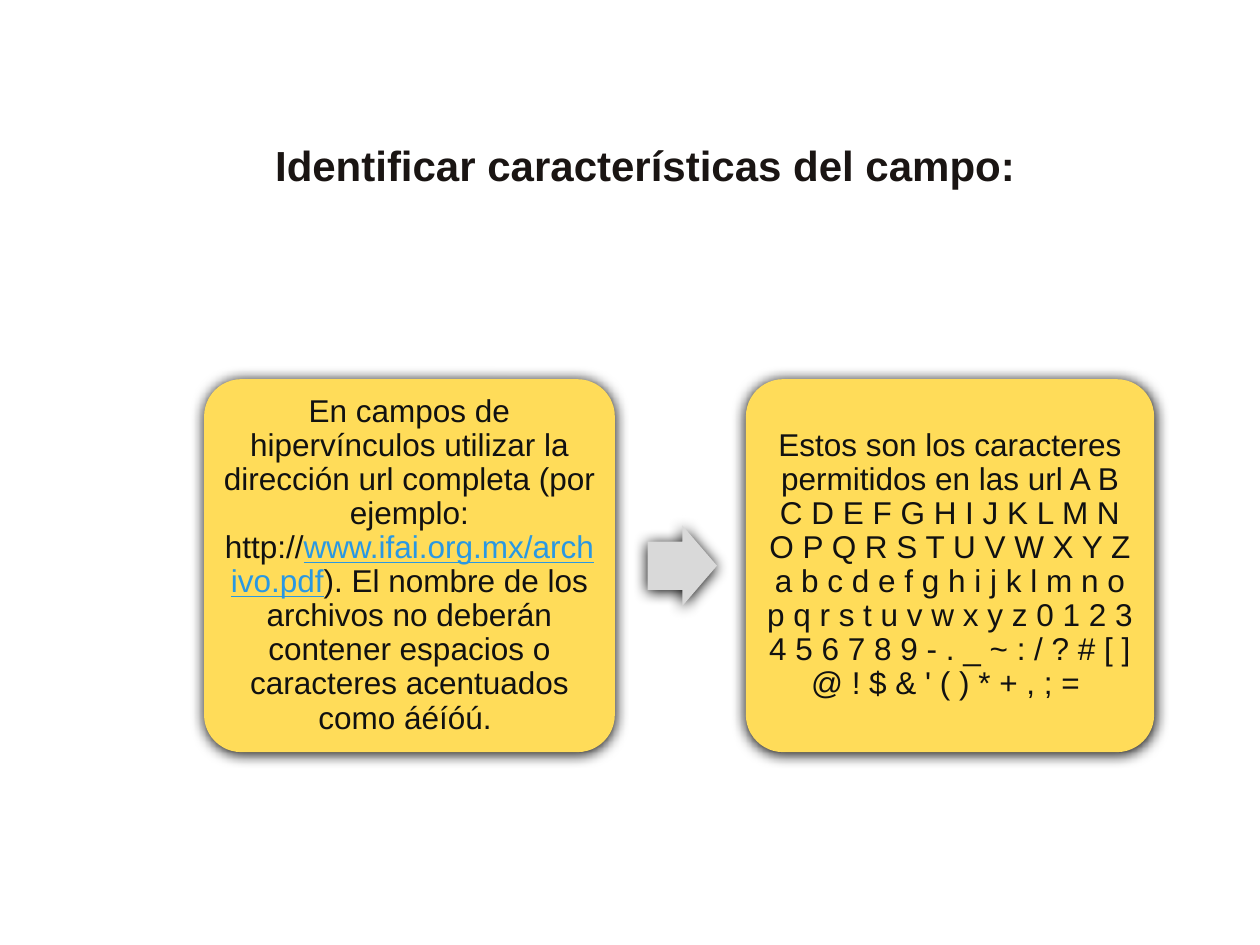
import dataclasses

import lxml.etree
import pptx
import pptx.dml.color
import pptx.enum.shapes
import pptx.enum.text
import pptx.oxml.ns
import pptx.util

Inches = pptx.util.Inches
Pt = pptx.util.Pt
Kind = pptx.enum.shapes.MSO_SHAPE


@dataclasses.dataclass(frozen=True)
class Theme:
    font: str = "Arial"
    head: str = "1A1513"
    ink: str = "111111"
    link: str = "2998E3"
    card: str = "FFDC59"
    arrow: str = "D9D9D9"
    shade: str = "000000"
    big: int = 24
    body: int = 18


THEME = Theme()
URL = "www.ifai.org.mx/archivo.pdf"
CARDS = [
    (1.62, 3.26, [
        ("En campos de hipervínculos utilizar la dirección url completa "
         "(por ejemplo: http://", {}),
        (URL, {"color": THEME.link, "line": True}),
        ("). El nombre de los archivos no deberán contener espacios o "
         "caracteres acentuados como áéíóú. ", {}),
    ]),
    (5.92, 3.24, [
        ("Estos son los caracteres permitidos en las url "
         "A B C D E F G H I J K L M N O P Q R S T U V W X Y Z "
         "a b c d e f g h i j k l m n o p q r s t u v w x y z "
         "0 1 2 3 4 5 6 7 8 9 - . _ ~ : / ? # [ ] @ ! $ & ' ( ) * + , ; = ", {}),
    ]),
]


def write(para, text, color=THEME.ink, size=THEME.body, bold=False, line=False):
    run = para.add_run()
    run.text = text
    font = run.font
    font.name, font.size = THEME.font, Pt(size)
    font.bold, font.underline = bold, line
    font.color.rgb = pptx.dml.color.RGBColor.from_string(color)


class Page:
    """Hold the theme and the current slide, and add its elements."""

    def __init__(self, deck, theme):
        self.theme = theme
        self.slide = deck.slides.add_slide(deck.slide_layouts[5])

    def frame(self, shape, pad_x, pad_y):
        frame = shape.text_frame
        frame.word_wrap = True
        frame.margin_left = frame.margin_right = Inches(pad_x)
        frame.margin_top = frame.margin_bottom = Inches(pad_y)
        frame.vertical_anchor = pptx.enum.text.MSO_ANCHOR.MIDDLE
        para = frame.paragraphs[0]
        para.alignment = pptx.enum.text.PP_ALIGN.CENTER
        return para

    def title(self, text, left, top, width, height):
        shape = self.slide.shapes.title
        shape.left, shape.top = Inches(left), Inches(top)
        shape.width, shape.height = Inches(width), Inches(height)
        para = self.frame(shape, 0.09, 0.04)
        write(para, text, color=self.theme.head, size=self.theme.big, bold=True)

    def shape(self, kind, left, top, width, height, fill, adjust):
        shape = self.slide.shapes.add_shape(
            kind, Inches(left), Inches(top), Inches(width), Inches(height))
        for spot, value in enumerate(adjust):
            shape.adjustments[spot] = value
        shape.fill.solid()
        shape.fill.fore_color.rgb = pptx.dml.color.RGBColor.from_string(fill)
        shape.line.fill.background()
        self.shadow(shape)
        return shape

    def shadow(self, shape):
        qn = pptx.oxml.ns.qn
        shape.shadow.inherit = False
        effects = shape._element.spPr.find(qn("a:effectLst"))
        outer = lxml.etree.SubElement(
            effects, qn("a:outerShdw"), blurRad=str(Pt(8.5)), dist=str(Pt(1)),
            dir="5400000", algn="ctr", rotWithShape="0")
        lxml.etree.SubElement(outer, qn("a:srgbClr"), val=self.theme.shade)

    def card(self, left, width, parts):
        shape = self.shape(Kind.ROUNDED_RECTANGLE, left, 3.01, width, 2.96,
                           self.theme.card, [0.1])
        para = self.frame(shape, 0.07, 0.07)
        para.line_spacing = 0.9
        for text, style in parts:
            write(para, text, **style)

    def arrow(self, left, top, width, height):
        self.shape(Kind.RIGHT_ARROW, left, top, width, height,
                   self.theme.arrow, [0.6, 0.5])


def main():
    deck = pptx.Presentation()
    deck.slide_width, deck.slide_height = Inches(10), Inches(7.5)
    page = Page(deck, THEME)
    page.title("Identificar características del campo:", 2.01, 1.06, 6.22, 0.49)
    for left, width, parts in CARDS:
        page.card(left, width, parts)
    page.arrow(5.14, 4.17, 0.55, 0.64)
    deck.save("out.pptx")


if __name__ == "__main__":
    main()
